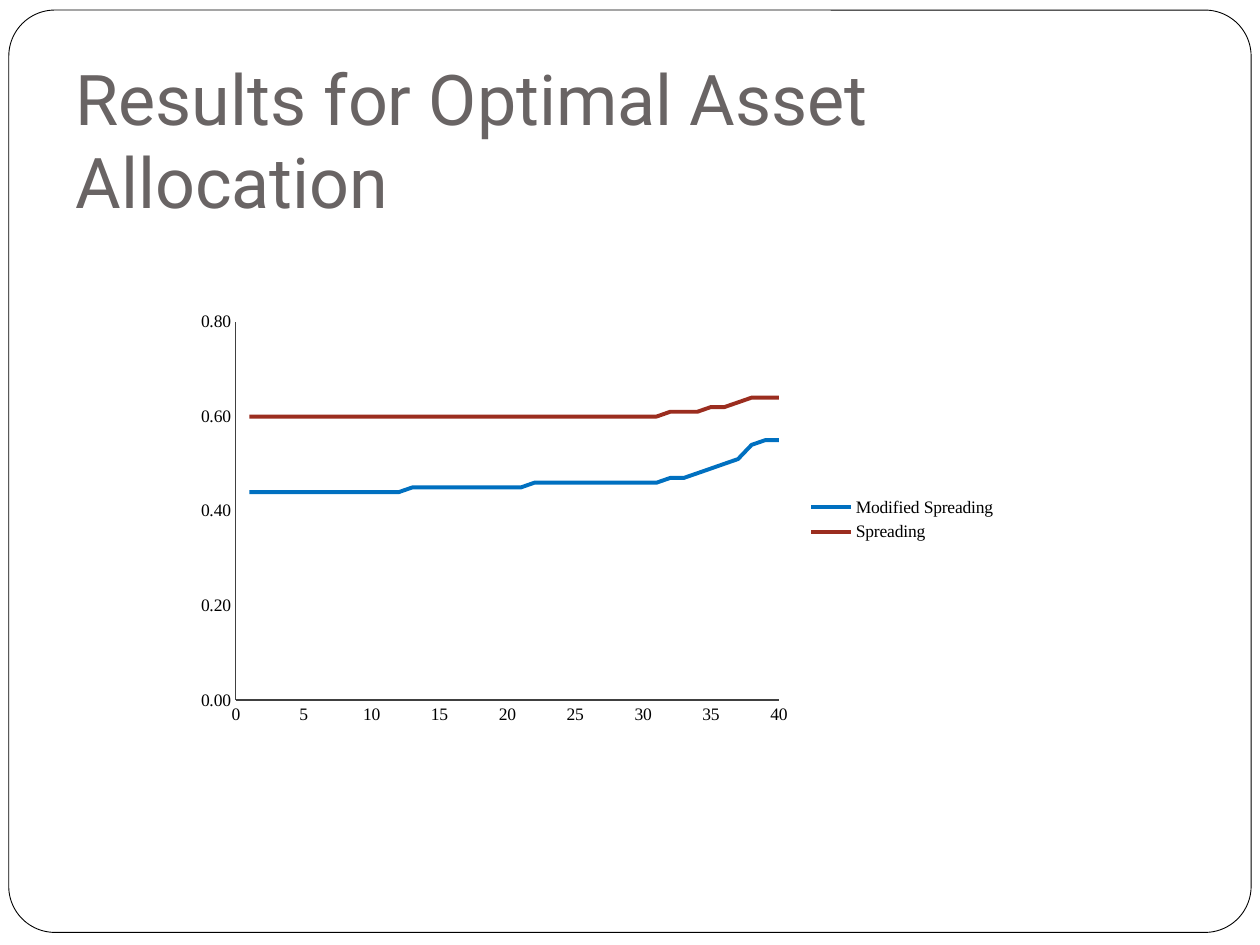
from lxml import etree
from pptx import Presentation
from pptx.chart import data as chart_data
from pptx.dml.color import RGBColor
from pptx.enum import chart as ch, shapes, text
from pptx.oxml import parse_xml
from pptx.oxml.ns import nsdecls
from pptx.util import Inches, Pt

THEME = {
    "title_font": "Roboto", "title_size": Pt(40), "title": RGBColor.from_string("696464"),
    "chart_font": "Times New Roman", "chart_size": Pt(10),
    "ink": RGBColor.from_string("000000"), "paper": RGBColor.from_string("FFFFFF"),
    "axis": RGBColor.from_string("404040"),
}
TITLE_LINES = ["Results for Optimal Asset ", "Allocation"]

# Equity share per year from year 1: (value, number of consecutive years)
ALLOCATIONS = [
    ("Modified Spreading", "0070C0",
     [(0.44, 12), (0.45, 9), (0.46, 10), (0.47, 2), (0.48, 1), (0.49, 1),
      (0.5, 1), (0.51, 1), (0.54, 1), (0.55, 2)]),
    ("Spreading", "9B2D1F",
     [(0.6, 31), (0.61, 3), (0.62, 2), (0.63, 1), (0.64, 3)]),
]
AXIS_RANGES = {"years": (0, 40, 5, "General"), "share": (0, 0.8, 0.2, "0.00")}
PLOT_AREA = {"x": 0.06, "y": 0.04, "w": 0.66, "h": 0.88}  # fractions of the chart


def box(left, top, width, height):
    return [Inches(v) for v in (left, top, width, height)]


def add_frame(slide):
    frame = slide.shapes.add_shape(shapes.MSO_SHAPE.ROUNDED_RECTANGLE,
                                   *box(0.07, 0.08, 9.86, 7.32))
    frame.adjustments[0] = 0.05
    frame.shadow.inherit = False
    frame.fill.solid()
    frame.fill.fore_color.rgb = THEME["paper"]
    frame.line.color.rgb = THEME["ink"]
    frame.line.width = Pt(0.5)
    slide.shapes.title.element.addprevious(frame.element)


def write_title(title):
    title.left, title.top, title.width, title.height = box(0.5, 0.3, 9, 1.57)
    body = title.text_frame
    body.word_wrap = True
    body.auto_size = text.MSO_AUTO_SIZE.NONE
    body.vertical_anchor = text.MSO_ANCHOR.BOTTOM
    body.margin_left = body.margin_right = body.margin_bottom = Inches(0.1)
    body.margin_top = Inches(0.05)
    paragraph = body.paragraphs[0]
    paragraph.alignment = text.PP_ALIGN.LEFT
    for i, line in enumerate(TITLE_LINES):
        if i:
            paragraph.add_line_break()
        run = paragraph.add_run()
        run.text = line
        run.font.name, run.font.size = THEME["title_font"], THEME["title_size"]
        run.font.color.rgb = THEME["title"]


def format_axis(axis, low, high, step, number_format):
    axis.minimum_scale, axis.maximum_scale, axis.major_unit = low, high, step
    axis.has_major_gridlines = False
    axis.major_tick_mark = axis.minor_tick_mark = ch.XL_TICK_MARK.NONE
    axis.tick_labels.number_format = number_format
    axis.tick_labels.number_format_is_linked = False
    axis.format.line.color.rgb = THEME["axis"]
    axis.format.line.width = Pt(0.75)


def fix_plot_area(chart):
    """Set the inner plot area by fractions of the chart."""
    plot_area = chart.element.find(".//{*}plotArea")
    for old in plot_area.findall("{*}layout"):
        plot_area.remove(old)
    layout = parse_xml(f"<c:layout {nsdecls('c')}><c:manualLayout/></c:layout>")
    settings = {"layoutTarget": "inner", "xMode": "edge", "yMode": "edge", **PLOT_AREA}
    for tag, value in settings.items():
        etree.SubElement(layout[0], f"{{{layout.nsmap['c']}}}{tag}", val=str(value))
    plot_area.insert(0, layout)


def add_allocation_chart(slide):
    data = chart_data.XyChartData()
    for name, _, spans in ALLOCATIONS:
        series = data.add_series(name)
        shares = [share for share, years in spans for _ in range(years)]
        for year, share in enumerate(shares, start=1):
            series.add_data_point(year, share)
    chart = slide.shapes.add_chart(ch.XL_CHART_TYPE.XY_SCATTER_SMOOTH_NO_MARKERS,
                                   *box(1.48, 2.42, 6.53, 3.41), data).chart
    chart.has_title = False
    chart.font.name, chart.font.size = THEME["chart_font"], THEME["chart_size"]
    chart.font.color.rgb = THEME["ink"]
    chart.has_legend = True
    chart.legend.position = ch.XL_LEGEND_POSITION.RIGHT
    chart.legend.include_in_layout = False
    format_axis(chart.category_axis, *AXIS_RANGES["years"])
    format_axis(chart.value_axis, *AXIS_RANGES["share"])
    chart.plots[0].vary_by_categories = False
    for series, (_, color, _) in zip(chart.plots[0].series, ALLOCATIONS):
        series.format.line.color.rgb = RGBColor.from_string(color)
        series.format.line.width = Pt(2.25)
        series.marker.style = ch.XL_MARKER_STYLE.NONE
    fix_plot_area(chart)


def main():
    deck = Presentation()
    deck.slide_width, deck.slide_height = Inches(10), Inches(7.5)
    slide = deck.slides.add_slide(deck.slide_layouts.get_by_name("Title Only"))
    add_frame(slide)
    write_title(slide.shapes.title)
    add_allocation_chart(slide)
    deck.save("out.pptx")


if __name__ == "__main__":
    main()
